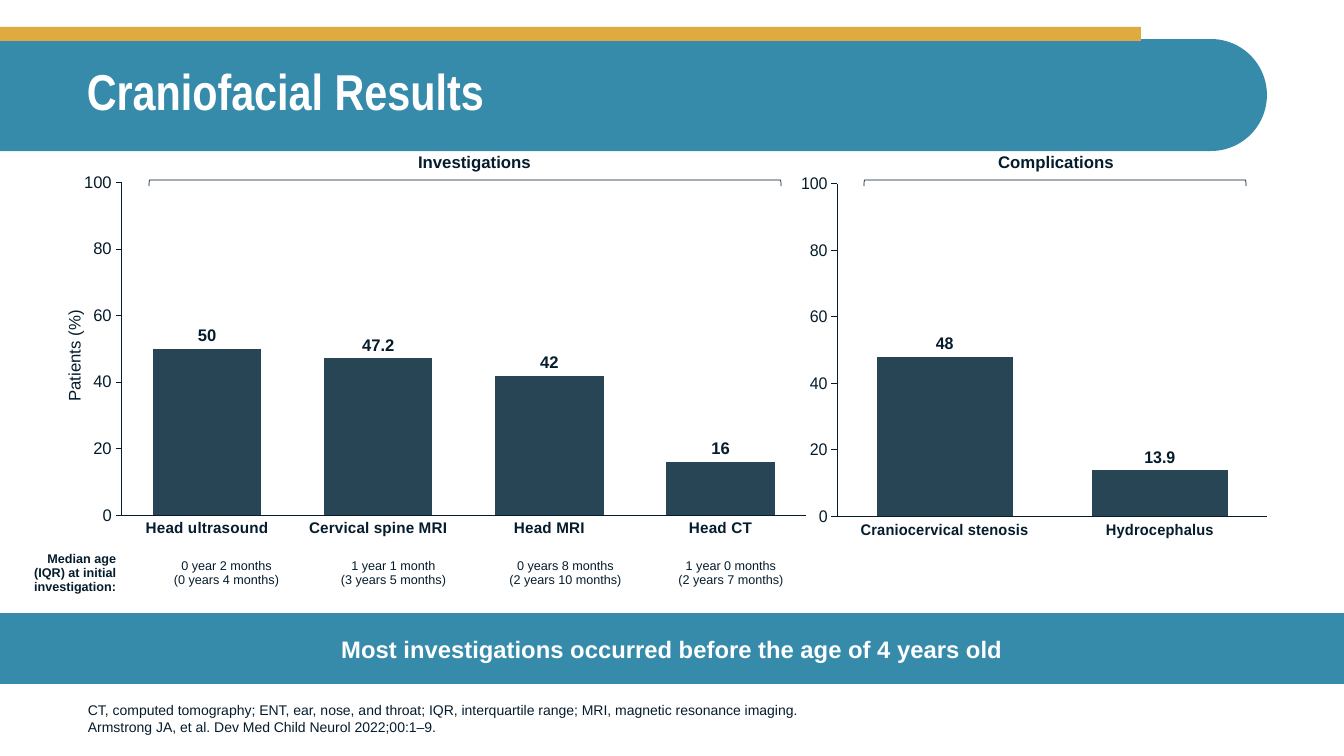
from pptx import Presentation
from pptx.chart.data import CategoryChartData
from pptx.dml.color import RGBColor
from pptx.enum.chart import XL_CHART_TYPE, XL_LABEL_POSITION, XL_TICK_MARK
from pptx.enum.shapes import MSO_SHAPE
from pptx.enum.text import MSO_ANCHOR, PP_ALIGN
from pptx.oxml import parse_xml
from pptx.oxml.ns import nsdecls
from pptx.util import Pt

NAVY, TEAL, GOLD, SLATE, WHITE = "051C2C", "368BAB", "DFAA40", "274554", "FFFFFF"
LEFT, CENTER, RIGHT = PP_ALIGN.LEFT, PP_ALIGN.CENTER, PP_ALIGN.RIGHT

TITLE = "Craniofacial Results"
MESSAGE = "Most investigations occurred before the age of 4 years old"
NOTES = [
    "CT, computed tomography; ENT, ear, nose, and throat; IQR, interquartile range; "
    "MRI, magnetic resonance imaging.",
    "Armstrong JA, et al. Dev Med Child Neurol 2022;00:1–9.",
]
# Boxes are (left, top, width, height) in px; plot is in fractions of the chart.
PANELS = [
    dict(heading="Investigations", heading_box=(148, 147, 653, 30),
         bracket=(149, 180, 632, 6), chart=(84, 162, 728, 432),
         plot=(0.041, 0.048, 0.951, 0.77),
         values={"Head ultrasound": 50, "Cervical spine MRI": 47.2,
                 "Head MRI": 42, "Head CT": 16}),
    dict(heading="Complications", heading_box=(865, 147, 382, 30),
         bracket=(864, 180, 382, 6), chart=(801, 166, 467, 379),
         plot=(0.031, 0.047, 0.969, 0.878),
         values={"Craniocervical stenosis": 48, "Hydrocephalus": 13.9}),
]
AGE_HEADING = ["Median age", "(IQR) at initial investigation:"]
AGES = [
    ["0 year 2 months", "(0 years 4 months)"],
    ["1 year 1 month", "(3 years 5 months)"],
    ["0 years 8 months", "(2 years 10 months)"],
    ["1 year 0 months", "(2 years 7 months)"],
]
AGE_COLUMNS = [124, 145, 189, 155, 176]


def px(n):
    return round(n * 914400 / 100.8)


def rgb(color):
    return RGBColor.from_string(color)


def set_font(font, size, color=NAVY, bold=False, name="Arial"):
    font.size, font.bold, font.name = Pt(size), bold, name
    font.color.rgb = rgb(color)


def write(tf, lines, size, align=LEFT, color=NAVY, bold=False, name="Arial"):
    for i, line in enumerate(lines):
        p = tf.paragraphs[0] if i == 0 else tf.add_paragraph()
        p.alignment = align
        r = p.add_run()
        r.text = line
        set_font(r.font, size, color, bold, name)


def unrotated(box, rotation):
    """Return the frame that covers box once it is turned by rotation."""
    x, y, w, h = box
    if rotation in (90, 270):
        x, y, w, h = x + (w - h) / 2, y + (h - w) / 2, h, w
    return [px(n) for n in (x, y, w, h)]


def add_text(s, box, lines, size, anchor=MSO_ANCHOR.TOP, rotation=0, **style):
    sp = s.shapes.add_textbox(*unrotated(box, rotation))
    sp.rotation = rotation
    tf = sp.text_frame
    tf.word_wrap = True
    tf.vertical_anchor = anchor
    write(tf, lines, size, **style)
    return tf


def add_shape(s, kind, box, fill=None, line=None, rotation=0):
    sp = s.shapes.add_shape(kind, *unrotated(box, rotation))
    sp.rotation = rotation
    sp.shadow.inherit = False
    if fill:
        sp.fill.solid()
        sp.fill.fore_color.rgb = rgb(fill)
    else:
        sp.fill.background()
    if line:
        sp.line.color.rgb = rgb(line)
        sp.line.width = Pt(0.5)
    else:
        sp.line.fill.background()
    return sp


def set_plot_area(chart, plot):
    """Fix the inner plot area at fractions of the chart frame."""
    sizes = "".join(f'<c:{tag} val="{n}"/>' for tag, n in zip("xywh", plot))
    layout = parse_xml(
        f'<c:layout {nsdecls("c")}><c:manualLayout><c:layoutTarget val="inner"/>'
        f'<c:xMode val="edge"/><c:yMode val="edge"/>{sizes}</c:manualLayout></c:layout>')
    area = chart.element.chart.plotArea
    for old in area.findall(layout.tag):
        area.remove(old)
    area.insert(0, layout)


def add_bars(s, box, plot_box, values):
    data = CategoryChartData()
    data.categories = list(values)
    data.add_series("Series 1", list(values.values()))
    frame = s.shapes.add_chart(XL_CHART_TYPE.COLUMN_CLUSTERED, *[px(n) for n in box], data)
    chart = frame.chart
    chart.has_legend = chart.has_title = False
    set_font(chart.font, 10)
    set_plot_area(chart, plot_box)

    cat, val = chart.category_axis, chart.value_axis
    val.minimum_scale, val.maximum_scale, val.major_unit = 0, 100, 20
    for axis, tick, size, bold in ((cat, XL_TICK_MARK.NONE, 11, True),
                                   (val, XL_TICK_MARK.OUTSIDE, 12, False)):
        axis.has_major_gridlines = False
        axis.major_tick_mark, axis.minor_tick_mark = tick, XL_TICK_MARK.NONE
        axis.format.line.color.rgb = rgb(NAVY)
        axis.format.line.width = Pt(0.75)
        set_font(axis.tick_labels.font, size, bold=bold)

    plot = chart.plots[0]
    plot.gap_width = 58
    plot.vary_by_categories = False
    fill = plot.series[0].format.fill
    fill.solid()
    fill.fore_color.rgb = rgb(SLATE)
    labels = plot.series[0].data_labels
    labels.show_value = True
    labels.position = XL_LABEL_POSITION.OUTSIDE_END
    set_font(labels.font, 12, bold=True)


def add_ages(s):
    tbl = s.shapes.add_table(1, len(AGE_COLUMNS), px(30), px(543),
                             px(sum(AGE_COLUMNS)), px(60)).table
    tbl.first_row = tbl.horz_banding = False
    for column, width in zip(tbl.columns, AGE_COLUMNS):
        column.width = px(width)
    for i, lines in enumerate([AGE_HEADING] + AGES):
        cell = tbl.cell(0, i)
        cell.fill.solid()
        cell.fill.fore_color.rgb = rgb(WHITE)
        cell.vertical_anchor = MSO_ANCHOR.MIDDLE
        if i == 0:
            cell.margin_left, cell.margin_right = 0, px(38)
        write(cell.text_frame, lines, 9, align=CENTER if i else RIGHT, bold=i == 0)


def main():
    prs = Presentation()
    prs.slide_width, prs.slide_height = px(1344), px(756)
    s = prs.slides.add_slide(prs.slide_layouts[6])

    band = add_shape(s, MSO_SHAPE.ROUND_2_SAME_RECTANGLE, (0, 39, 1267, 112), TEAL, rotation=270)
    band.adjustments[0], band.adjustments[1] = 0, 0.5
    add_shape(s, MSO_SHAPE.RECTANGLE, (0, 27, 1141, 14), GOLD)
    tf = add_text(s, (77, 39, 1190, 111), [TITLE], 36, MSO_ANCHOR.MIDDLE,
                  color=WHITE, bold=True, name="Arial Narrow")
    tf.paragraphs[0].line_spacing = 0.9

    for panel in PANELS:
        add_bars(s, panel["chart"], panel["plot"], panel["values"])
        add_shape(s, MSO_SHAPE.LEFT_BRACKET, panel["bracket"], line=NAVY, rotation=90)
        add_text(s, panel["heading_box"], [panel["heading"]], 12, align=CENTER, bold=True)
    add_text(s, (58, 219, 32, 274), ["Patients (%)"], 12, MSO_ANCHOR.MIDDLE, 270, align=CENTER)
    add_ages(s)

    message = add_shape(s, MSO_SHAPE.RECTANGLE, (0, 613, 1344, 71), TEAL).text_frame
    message.vertical_anchor = MSO_ANCHOR.MIDDLE
    write(message, [MESSAGE], 17, CENTER, WHITE, True)
    add_text(s, (78, 684, 996, 56), NOTES, 10, MSO_ANCHOR.BOTTOM)
    prs.save("out.pptx")


if __name__ == "__main__":
    main()
